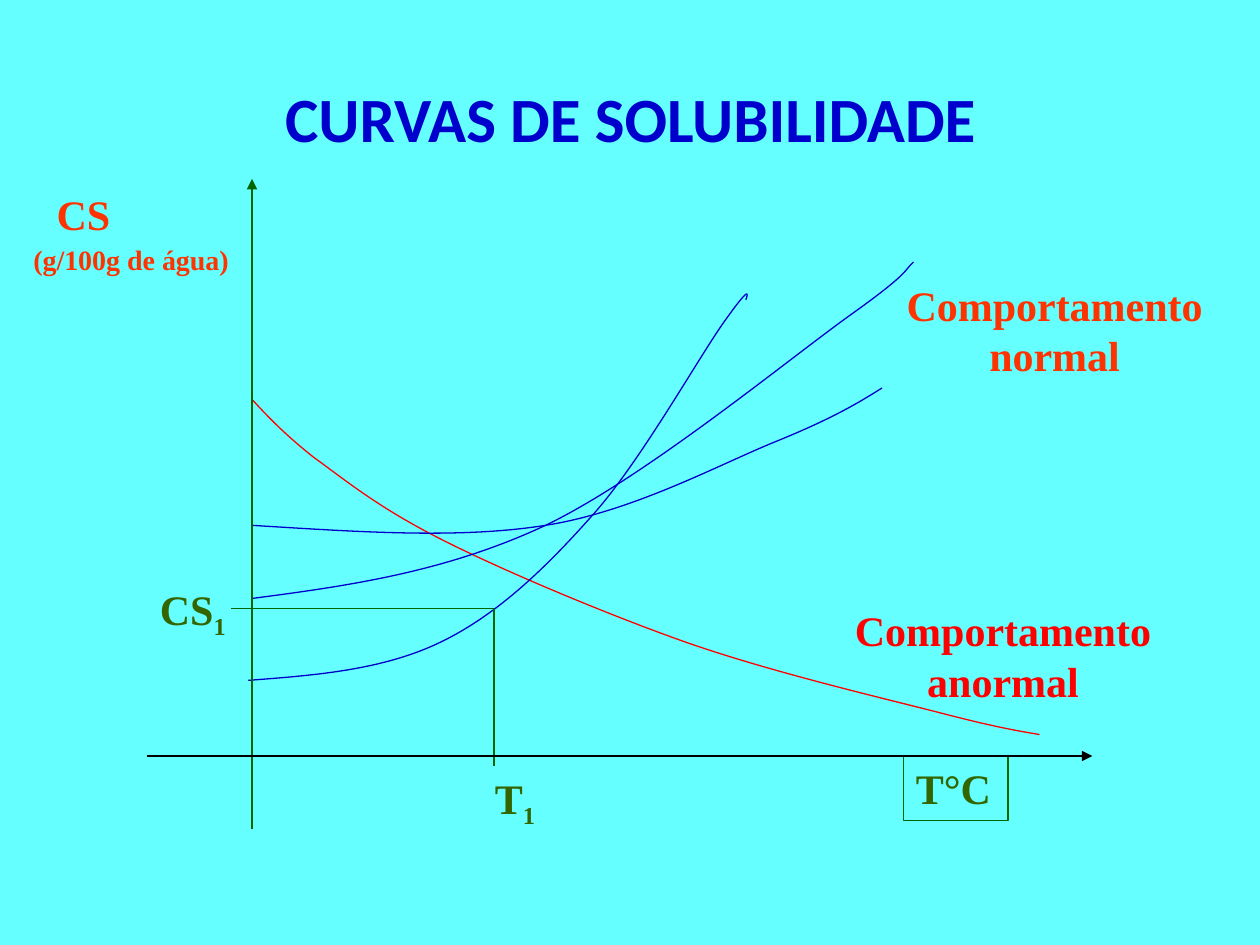
"""Build a slide of solubility curves against temperature."""
from lxml.etree import SubElement
from pptx import Presentation
from pptx.dml.color import RGBColor
from pptx.enum.shapes import MSO_CONNECTOR, MSO_SHAPE
from pptx.enum.text import MSO_ANCHOR, MSO_AUTO_SIZE, PP_ALIGN
from pptx.oxml.ns import qn
from pptx.util import Inches, Pt

COLOURS = {
    "background": "66FFFF", "blue": "0000CC", "red": "FF0000",
    "orange": "FF3300", "olive": "336600", "green": "006600", "black": "000000",
}
SERIF = "Times New Roman"
TITLE = "CURVAS DE SOLUBILIDADE"
TITLE_BOX = (1.17, 0.58, 7.67, 0.7)

ORIGIN_X, ORIGIN_Y = 2, 6
T1_X, CS1_Y = 3.92, 4.83

CURVES = [
    ("red", [(2, 3.17), (2.12, 3.3), (2.25, 3.44), (2.49, 3.63),
             (2.74, 3.81), (2.99, 4.02), (3.48, 4.27),
             (3.97, 4.52), (4.8, 4.87), (5.45, 5.1),
             (6.11, 5.33), (6.96, 5.53), (7.43, 5.65),
             (7.89, 5.77), (8.07, 5.8), (8.25, 5.83)]),
    ("blue", [(1.97, 5.4), (2.5, 5.36), (3.03, 5.32), (3.49, 5.1),
              (3.95, 4.88), (4.34, 4.5), (4.72, 4.07),
              (5.09, 3.65), (5.55, 2.83), (5.75, 2.55),
              (5.95, 2.27), (5.94, 2.32), (5.92, 2.38)]),
    ("blue", [(2, 4.17), (2.82, 4.22), (3.64, 4.28), (4.33, 4.17),
              (5.03, 4.06), (5.72, 3.68), (6.17, 3.5),
              (6.61, 3.32), (6.81, 3.2), (7, 3.08)]),
    ("blue", [(2, 4.75), (2.77, 4.65), (3.54, 4.54), (4.33, 4.17),
              (5.12, 3.79), (6.26, 2.85), (6.75, 2.5),
              (7.24, 2.15), (7.17, 2.15), (7.25, 2.08)]),
]

LINES = [
    ("green", (ORIGIN_X, 6.58), (ORIGIN_X, 1.42), True),
    ("green", (T1_X, 6.08), (T1_X, CS1_Y), False),
    ("green", (T1_X, CS1_Y), (1.83, CS1_Y), False),
    ("black", (1.17, ORIGIN_Y), (8.67, ORIGIN_Y), True),
]

LABELS = [
    ((7.08, 2.17, 2.58, 0.9), "orange", PP_ALIGN.CENTER, "Comportamento normal", ""),
    ((6.67, 4.75, 2.58, 0.9), "red", PP_ALIGN.CENTER, "Comportamento anormal", ""),
    ((1.17, 4.58, 0.75, 0.5), "olive", PP_ALIGN.LEFT, "CS", "1"),
    ((3.83, 6.08, 0.67, 0.5), "olive", PP_ALIGN.LEFT, "T", "1"),
]
QUANTITY, UNIT = "CS", "(g/100g de água)"
QUANTITY_BOX = (0, 1.45, 2.08, 0.77)
QUANTITY_INDENT = 0.35
TEMPERATURE = "T°C"
TEMPERATURE_BOX = (7.17, ORIGIN_Y, 0.83, 0.51)


def rgb(colour):
    return RGBColor.from_string(COLOURS[colour])


def place(box):
    return [Inches(length) for length in box]


def style_line(line, colour):
    line.color.rgb = rgb(colour)
    line.width = Pt(0.75)


def add_run(paragraph, wording, colour, size=24, face=SERIF):
    run = paragraph.add_run()
    run.text = wording
    run.font.name, run.font.size, run.font.bold = face, Pt(size), True
    run.font.color.rgb = rgb(colour)
    return run


def prepare_frame(shape):
    frame = shape.text_frame
    frame.word_wrap = True
    frame.auto_size = MSO_AUTO_SIZE.SHAPE_TO_FIT_TEXT
    frame.vertical_anchor = MSO_ANCHOR.TOP
    return frame


def add_curve(slide, colour, points):
    start, *controls = [place(point) for point in points]
    builder = slide.shapes.build_freeform(*start)
    builder.add_line_segments(controls, close=False)
    curve = builder.convert_to_shape()
    outline = curve._element.xpath(".//a:path")[0]
    segments = outline.findall(qn("a:lnTo"))
    for first in range(0, len(segments), 3):
        bezier = SubElement(outline, qn("a:cubicBezTo"))
        for segment in segments[first:first + 3]:
            bezier.append(segment[0])
            outline.remove(segment)
    curve.fill.background()
    curve.shadow.inherit = False
    style_line(curve.line, colour)


def add_line(slide, colour, start, end, arrow):
    connector = slide.shapes.add_connector(
        MSO_CONNECTOR.STRAIGHT, *place(start), *place(end))
    style_line(connector.line, colour)
    if arrow:
        SubElement(connector.line._get_or_add_ln(), qn("a:tailEnd"), type="triangle")
    SubElement(connector._element.spPr, qn("a:effectLst"))


def add_label(slide, box, colour, alignment, wording, subscript):
    frame = prepare_frame(slide.shapes.add_textbox(*place(box)))
    paragraph = frame.paragraphs[0]
    paragraph.alignment = alignment
    add_run(paragraph, wording, colour)
    if subscript:
        index = add_run(paragraph, subscript, colour)
        index._r.get_or_add_rPr().set("baseline", "-25000")


def add_quantity(slide):
    frame = prepare_frame(slide.shapes.add_textbox(*place(QUANTITY_BOX)))
    quantity, unit = frame.paragraphs[0], frame.add_paragraph()
    quantity._p.get_or_add_pPr().set("marL", str(Inches(QUANTITY_INDENT)))
    add_run(quantity, QUANTITY, "orange")
    unit.alignment = PP_ALIGN.CENTER
    unit.space_before = Pt(2)
    add_run(unit, UNIT, "orange", 16)


def add_temperature(slide):
    frame_box = slide.shapes.add_shape(MSO_SHAPE.RECTANGLE, *place(TEMPERATURE_BOX))
    frame_box.fill.background()
    frame_box.shadow.inherit = False
    style_line(frame_box.line, "green")
    paragraph = prepare_frame(frame_box).paragraphs[0]
    paragraph.alignment = PP_ALIGN.LEFT
    add_run(paragraph, TEMPERATURE, "olive")


def main():
    deck = Presentation()
    deck.slide_width, deck.slide_height = Inches(10), Inches(7.5)
    slide = deck.slides.add_slide(deck.slide_layouts[5])
    slide.background.fill.solid()
    slide.background.fill.fore_color.rgb = rgb("background")

    title = slide.shapes.title
    title.left, title.top, title.width, title.height = place(TITLE_BOX)
    heading = prepare_frame(title).paragraphs[0]
    heading.alignment = PP_ALIGN.CENTER
    add_run(heading, TITLE, "blue", 36, "Calibri")

    for curve in CURVES:
        add_curve(slide, *curve)
    add_quantity(slide)
    for label in LABELS:
        add_label(slide, *label)
    add_temperature(slide)
    for line in LINES:
        add_line(slide, *line)
    deck.save("out.pptx")


if __name__ == "__main__":
    main()
